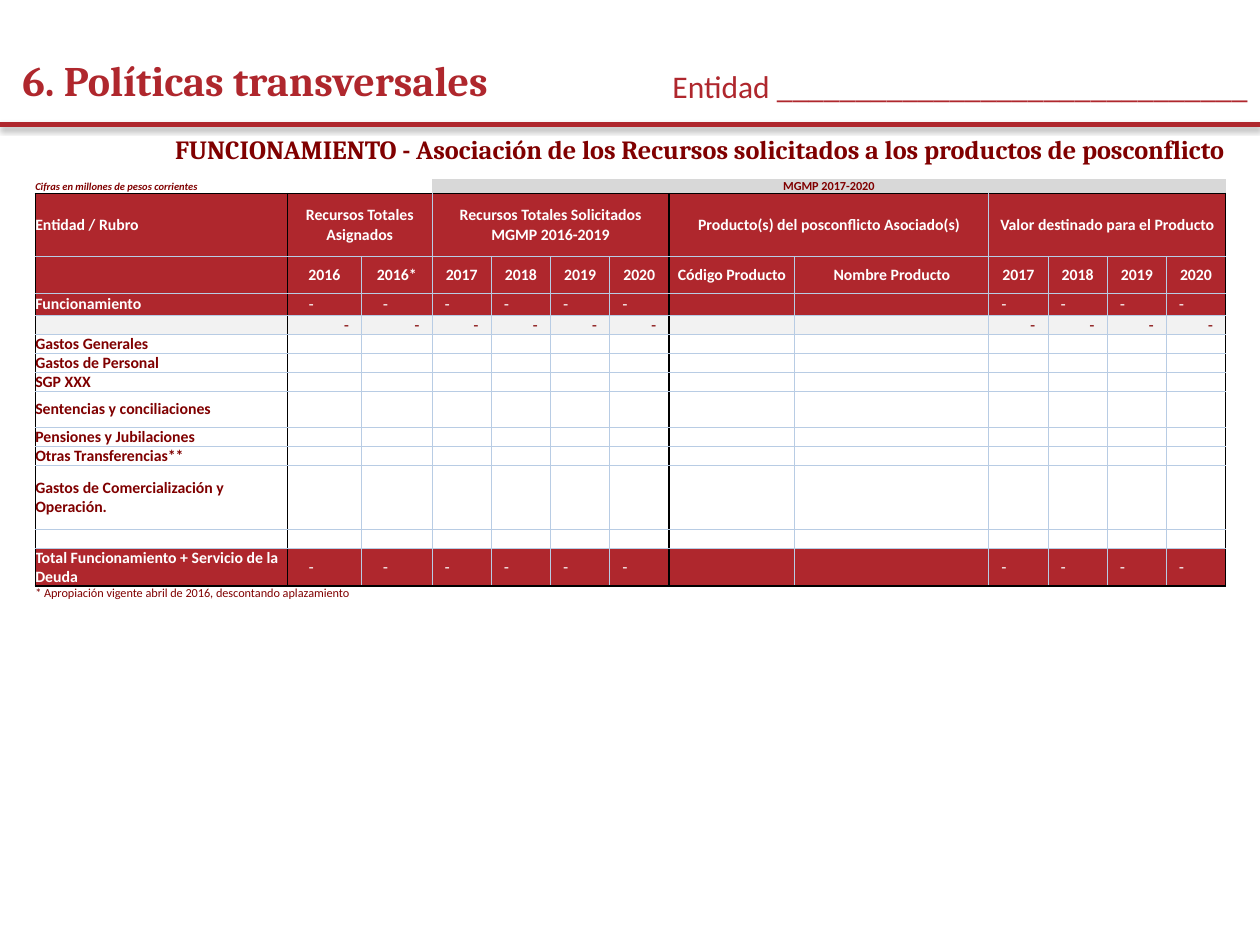
from lxml import etree
from pptx import Presentation
from pptx.dml.color import RGBColor
from pptx.enum.shapes import MSO_CONNECTOR
from pptx.enum.text import MSO_ANCHOR, PP_ALIGN
from pptx.oxml import parse_xml
from pptx.oxml.ns import nsdecls, qn
from pptx.util import Inches, Pt

LEFT, CENTER, RIGHT = PP_ALIGN.LEFT, PP_ALIGN.CENTER, PP_ALIGN.RIGHT
MIDDLE, TOP, BOTTOM = MSO_ANCHOR.MIDDLE, MSO_ANCHOR.TOP, MSO_ANCHOR.BOTTOM
STRAIGHT = MSO_CONNECTOR.STRAIGHT
COLORS = {"red": "AF272D", "maroon": "800000", "white": "FFFFFF", "gray": "D8D8D8",
          "light": "F2F2F2", "grid": "B8CCE4", "black": "000000"}


def write(frame, text, size, color, font="Calibri", bold=False, italic=False, align=LEFT):
    para = frame.paragraphs[0]
    para.alignment = align
    for number, line in enumerate(text.split("\n")):
        if number:
            para.add_line_break()
        span = para.add_run()
        span.text = line
        span.font.size = Pt(size)
        span.font.name = font
        span.font.bold = bold
        span.font.italic = italic
        span.font.color.rgb = RGBColor.from_string(COLORS[color])


def add_edge(cell, side, color, width):
    properties = cell._tc.get_or_add_tcPr()
    edge = etree.SubElement(properties, qn("a:ln" + side), w=str(Pt(width)))
    if color is None:
        etree.SubElement(edge, qn("a:noFill"))
    else:
        fill = etree.SubElement(edge, qn("a:solidFill"))
        etree.SubElement(fill, qn("a:srgbClr"), val=COLORS[color])


deck = Presentation()
deck.slide_width, deck.slide_height = Inches(10), Inches(7.5)
page = deck.slides.add_slide(deck.slide_layouts[6])

# Rule under the heading, with a soft shadow
rule = page.shapes.add_connector(STRAIGHT, Inches(0), Inches(0.99), Inches(10), Inches(0.99))
rule.line.color.rgb = RGBColor.from_string(COLORS["red"])
rule.line.width = Pt(3)
rule._element.spPr.append(parse_xml(
    f'<a:effectLst {nsdecls("a")}><a:outerShdw blurRad="{Pt(3.1)}" dist="{Pt(1.8)}" '
    'dir="5400000" rotWithShape="0"><a:srgbClr val="000000"><a:alpha val="35000"/>'
    '</a:srgbClr></a:outerShdw></a:effectLst>'))

# Headings
headings = [
    ("FUNCIONAMIENTO - Asociación de los Recursos solicitados a los productos de posconflicto",
     (0.91, 0.99, 8.91, 0.39), 15, "maroon", "Cambria", True, RIGHT, MIDDLE),
    ("6. Políticas transversales",
     (0.08, 0.36, 8.3, 0.55), 24, "red", "Cambria", True, LEFT, MIDDLE),
    ("Entidad ______________________________",
     (5.16, 0.48, 4.84, 0.4), 18, "red", "Calibri", False, RIGHT, TOP),
]
for text, place, size, color, font, bold, align, anchor in headings:
    box = page.shapes.add_textbox(*map(Inches, place))
    box.text_frame.word_wrap = True
    box.text_frame.vertical_anchor = anchor
    write(box.text_frame, text, size, color, font, bold, align=align)

# Table grid
widths = [2, 0.59, 0.56] + [0.47] * 4 + [1, 1.54] + [0.47] * 4
heights = [0.11, 0.5, 0.29, 0.18, 0.15, 0.15, 0.15, 0.15, 0.28, 0.15, 0.15, 0.51, 0.15, 0.29, 0.1]
last_row = len(heights) - 1
table = page.shapes.add_table(len(heights), len(widths), Inches(0.28), Inches(1.42),
                              Inches(sum(widths)), Inches(sum(heights))).table
table.first_row = table.horz_banding = False
for column, width in zip(table.columns, widths):
    column.width = Inches(width)
for row, height in zip(table.rows, heights):
    row.height = Inches(height)

# Merged cells: (row, first column) -> number of columns
spans = {(0, 3): 10, (1, 1): 2, (1, 3): 4, (1, 7): 2, (1, 9): 4, (last_row, 0): 3}
for (row, column), count in spans.items():
    table.cell(row, column).merge(table.cell(row, column + count - 1))

# Borders, fills and margins
row_fills = {row: "red" for row in (1, 2, 3, 13)} | {4: "light"}
for row in range(len(heights)):
    for column in range(len(widths)):
        cell = table.cell(row, column)
        cell.margin_left = cell.margin_right = cell.margin_top = cell.margin_bottom = 0
        cell.vertical_anchor = BOTTOM if row == last_row or (row, column) == (0, 0) else MIDDLE
        if not cell.is_spanned:
            end = column + spans.get((row, column), 1) - 1
            outside = row in (0, last_row)
            thick = {"L": column in (0, 1, 7) and not outside,
                     "R": end in (0, 6, 12) and not outside,
                     "T": row in (1, last_row), "B": row in (0, last_row - 1)}
            for side, black in thick.items():
                if black:
                    add_edge(cell, side, "black", 1)
                else:
                    add_edge(cell, side, None if outside else "grid", 0.5)
        color = "gray" if (row, column) == (0, 3) else row_fills.get(row)
        if color:
            cell.fill.solid()
            cell.fill.fore_color.rgb = RGBColor.from_string(COLORS[color])
        else:
            cell.fill.background()

# Column headers
years = ["2017", "2018", "2019", "2020"]
headers = {(1, 1): "Recursos Totales Asignados",
           (1, 3): "Recursos Totales Solicitados\nMGMP 2016-2019",
           (1, 7): "Producto(s) del posconflicto Asociado(s)",
           (1, 9): "Valor destinado para el Producto"}
second_row = ["2016", "2016*", *years, "Código Producto", "Nombre Producto", *years]
headers |= {(2, column): text for column, text in enumerate(second_row, 1)}
for place, text in headers.items():
    write(table.cell(*place).text_frame, text, 9, "white", bold=True, align=CENTER)

# Row labels
labels = {1: "Entidad / Rubro", 3: "Funcionamiento", 5: "Gastos Generales",
          6: "Gastos de Personal", 7: "SGP XXX", 8: "Sentencias y conciliaciones",
          9: "Pensiones y Jubilaciones", 10: "Otras Transferencias**",
          11: "Gastos de Comercialización y Operación.",
          13: "Total Funcionamiento + Servicio de la Deuda"}
for row, text in labels.items():
    color = "white" if row in row_fills else "maroon"
    write(table.cell(row, 0).text_frame, text, 9, color, bold=True)

# Dashes for empty amounts
for row in (3, 4, 13):
    for column in [*range(1, 7), *range(9, 13)]:
        cell = table.cell(row, column)
        if row == 4:
            cell.margin_right = Inches(0.1)
            write(cell.text_frame, "-", 9, "maroon", "Arial", align=RIGHT)
        else:
            cell.margin_left = Inches(0.17 if column < 3 else 0.1)
            write(cell.text_frame, "-", 9, "white", "Arial")

# Notes above and below the grid
write(table.cell(0, 0).text_frame, "Cifras en millones de pesos corrientes", 6, "maroon",
      bold=True, italic=True)
write(table.cell(0, 3).text_frame, "MGMP 2017-2020", 7, "maroon", bold=True, align=CENTER)
write(table.cell(last_row, 0).text_frame,
      "* Apropiación vigente abril de 2016, descontando aplazamiento", 7, "maroon")

# Small type in empty cells keeps the rows low
for cell in table.iter_cells():
    if not cell.text_frame.text:
        etree.SubElement(cell.text_frame.paragraphs[0]._p, qn("a:endParaRPr"), sz="600")

deck.save("out.pptx")
